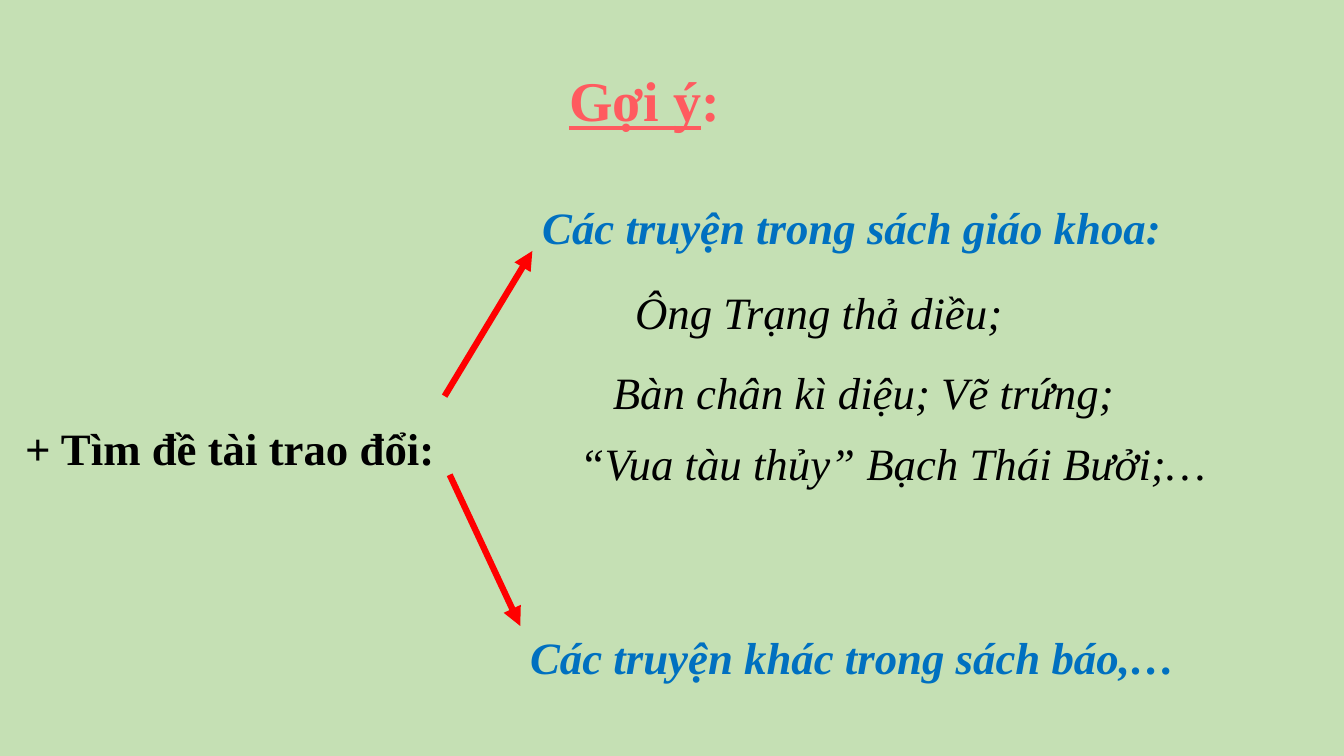
from lxml.etree import SubElement
from pptx import Presentation
from pptx.dml.color import RGBColor
from pptx.enum.shapes import MSO_CONNECTOR
from pptx.enum.text import MSO_ANCHOR, MSO_AUTO_SIZE, PP_ALIGN
from pptx.oxml.ns import qn
from pptx.util import Inches, Pt

FONT = "Times New Roman"
BACKGROUND = "C5E0B4"
CORAL = "FF5B5F"
BLUE = "0070C0"
BLACK = "000000"
RED = "FF0000"


def color(hex_value):
    """Turn a hex string into a colour."""
    return RGBColor.from_string(hex_value)


def add_run(paragraph, text, size=32, fill=BLACK, bold=False, italic=False, underline=False):
    """Append a formatted run to a paragraph."""
    run = paragraph.add_run()
    run.text = text
    font = run.font
    font.name, font.size = FONT, Pt(size)
    font.bold, font.italic, font.underline = bold, italic, underline
    font.color.rgb = color(fill)


def prepare_paragraph(shape, line_spacing=1.5, alignment=PP_ALIGN.LEFT):
    """Set up the text frame of a shape and return its first paragraph."""
    frame = shape.text_frame
    frame.word_wrap = True
    frame.auto_size = MSO_AUTO_SIZE.SHAPE_TO_FIT_TEXT
    frame.vertical_anchor = MSO_ANCHOR.TOP
    paragraph = frame.paragraphs[0]
    paragraph.line_spacing = line_spacing
    paragraph.alignment = alignment
    return paragraph


def set_title(slide):
    """Place the title and underline its words but not its colon."""
    title = slide.shapes.title
    title.left, title.top = Inches(5.11), Inches(0.27)
    title.width, title.height = Inches(2.71), Inches(0.99)
    paragraph = prepare_paragraph(title, alignment=PP_ALIGN.CENTER)
    add_run(paragraph, "Gợi ý", size=40, fill=CORAL, bold=True, underline=True)
    add_run(paragraph, ": ", size=40, fill=CORAL, bold=True)


def add_label(slide, text, left, top, width, height=0.81, line_spacing=1.5, **text_format):
    """Add a one-line text box."""
    box = slide.shapes.add_textbox(Inches(left), Inches(top), Inches(width), Inches(height))
    add_run(prepare_paragraph(box, line_spacing), text, **text_format)


def add_arrow(slide, start, end):
    """Draw a red arrow from start to end."""
    points = [Inches(value) for value in (*start, *end)]
    arrow = slide.shapes.add_connector(MSO_CONNECTOR.STRAIGHT, *points)
    arrow.line.color.rgb = color(RED)
    arrow.line.width = Pt(4.5)
    SubElement(arrow.line._get_or_add_ln(), qn("a:tailEnd"), type="triangle")
    SubElement(arrow._element.spPr, qn("a:effectLst"))


def main():
    """Build and save the slide."""
    presentation = Presentation()
    presentation.slide_width, presentation.slide_height = Inches(13.33), Inches(7.5)
    slide = presentation.slides.add_slide(presentation.slide_layouts[5])
    slide.background.fill.solid()
    slide.background.fill.fore_color.rgb = color(BACKGROUND)

    set_title(slide)
    add_label(slide, "+ Tìm đề tài trao đổi:", 0.15, 3.86, 4.42, 0.91, bold=True)

    heading = {"fill": BLUE, "bold": True, "italic": True}
    add_label(slide, "Các truyện trong sách giáo khoa:", 5.28, 1.67, 7.13, **heading)
    add_label(slide, "Các truyện khác trong sách báo,…", 5.16, 5.93, 7.03, **heading)

    add_label(slide, "Ông Trạng thả diều;", 6.2, 2.51, 5.13, italic=True)
    add_label(slide, "Bàn chân kì diệu; Vẽ trứng;", 5.98, 3.3, 5.56, italic=True)
    add_label(slide, "“Vua tàu thủy” Bạch Thái Bưởi;…", 5.65, 4.27, 6.49, 0.64,
              line_spacing=1.0, italic=True)

    add_arrow(slide, (4.41, 3.93), (5.28, 2.49))
    add_arrow(slide, (4.46, 4.71), (5.16, 6.21))
    presentation.save("out.pptx")


if __name__ == "__main__":
    main()
